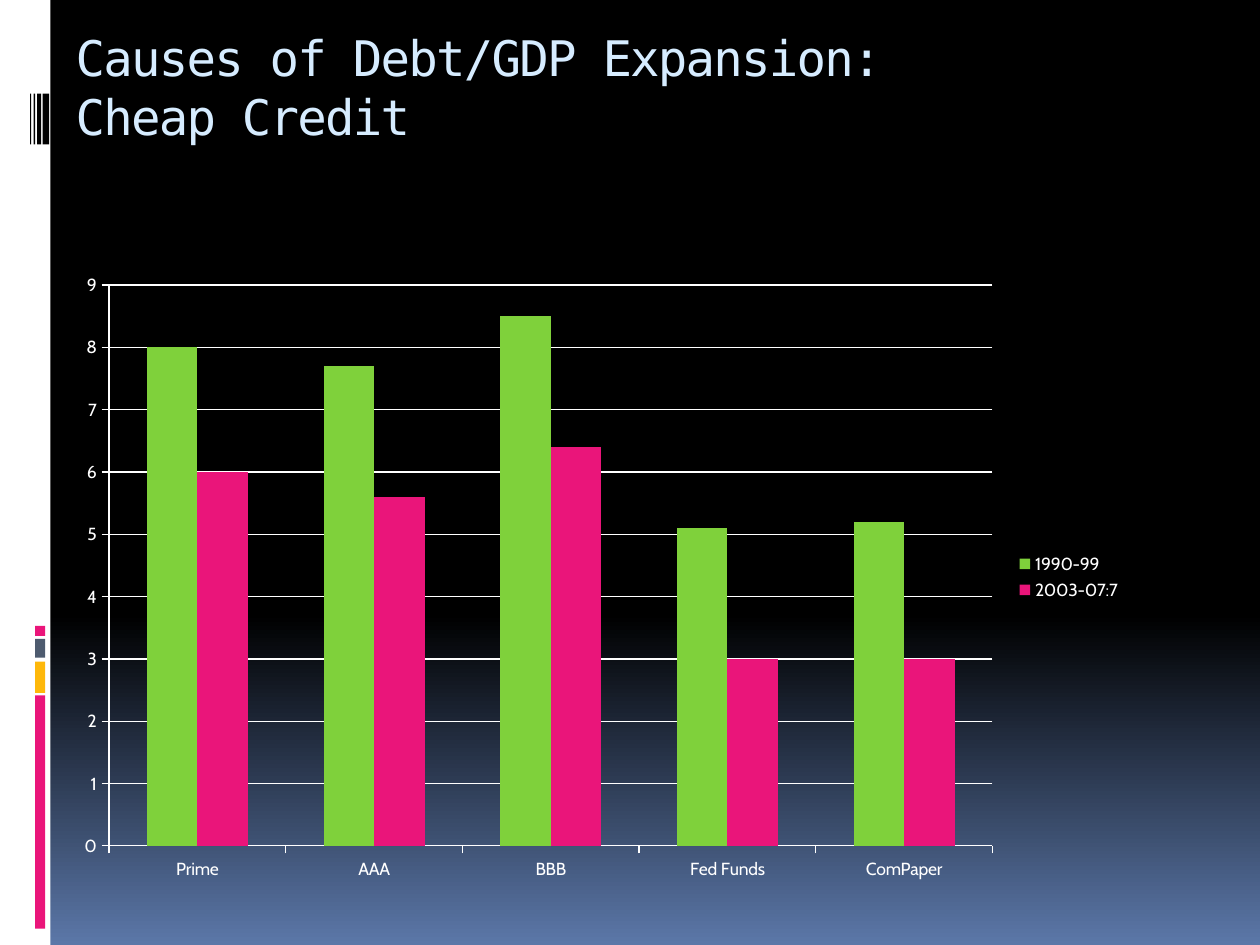
from copy import deepcopy

from pptx import Presentation
from pptx.chart.data import CategoryChartData
from pptx.dml.color import RGBColor
from pptx.enum.chart import XL_CHART_TYPE as ChartType
from pptx.enum.chart import XL_LEGEND_POSITION as LegendPos
from pptx.enum.chart import XL_TICK_MARK as Tick
from pptx.enum.shapes import MSO_SHAPE as Shape
from pptx.enum.text import MSO_ANCHOR as Anchor
from pptx.enum.text import MSO_AUTO_SIZE as AutoSize
from pptx.enum.text import PP_ALIGN as Align
from pptx.util import Cm, Pt

WHITE, BLACK, PINK, GREEN = "FFFFFF", "000000", "EA157A", "7FD13B"
AMBER, SLATE, BLUE, PALE = "FEB80A", "4E5B6F", "5B77A8", "D6ECFF"


def color(value):
    """Turn a hex string into a colour."""
    return RGBColor.from_string(value)


def paint_background(s, stops):
    """Fill the background with a vertical gradient of (position, colour) stops."""
    fill = s.background.fill
    fill.gradient()
    fill.gradient_angle = 270
    gs_list = s.element.xpath(".//a:gsLst")[0]
    while len(gs_list) < len(stops):
        gs_list.append(deepcopy(gs_list[0]))
    for stop, (position, value) in zip(fill.gradient_stops, stops):
        stop.position = position
        stop.color.rgb = color(value)


def add_bar(s, left, top, width, height, fill):
    """Add a plain rectangle, measured in centimetres."""
    sp = s.shapes.add_shape(Shape.RECTANGLE, Cm(left), Cm(top), Cm(width), Cm(height))
    sp.shadow.inherit = False
    sp.fill.solid()
    sp.fill.fore_color.rgb = color(fill)
    sp.line.fill.background()


def add_sidebar(s):
    """Add the white strip with its coloured blocks and barcode."""
    add_bar(s, 0, 0, 1.02, 19.05, WHITE)
    blocks = [(12.62, 0.2, PINK), (12.88, 0.38, SLATE),
              (13.34, 0.63, AMBER), (14.02, 4.7, PINK)]
    for top, height, fill in blocks:
        add_bar(s, 0.71, top, 0.2, height, fill)
    for left, width in [(0.61, 0.02), (0.68, 0.03), (0.75, 0.08), (0.86, 0.13)]:
        add_bar(s, left, 1.89, width, 1.02, BLACK)


def write(tf, text, size=28, font="DejaVu Sans Mono", fill=PALE, spacing=0):
    """Write left-aligned text in the given format."""
    p = tf.paragraphs[0]
    p.text = text
    p.alignment = Align.LEFT
    for r in p.runs:
        r.font.size = Pt(size)
        r.font.name = font
        r.font.color.rgb = color(fill)
        r.font._element.set("spc", str(spacing * 100))


def set_title(s, text):
    """Place and fill the title placeholder."""
    sp = s.shapes.title
    sp.left, sp.top, sp.width, sp.height = Cm(1.27), Cm(0.43), Cm(22.86), Cm(2.34)
    tf = sp.text_frame
    tf.word_wrap = True
    tf.auto_size = AutoSize.NONE
    tf.vertical_anchor = Anchor.TOP
    write(tf, text, spacing=-1)


def style_axis(axis):
    """Give an axis white lines and outside ticks."""
    axis.major_tick_mark = Tick.OUTSIDE
    axis.minor_tick_mark = Tick.NONE
    axis.format.line.color.rgb = color(WHITE)
    axis.format.line.width = Pt(0.75)


def add_rate_chart(s, categories, series):
    """Add the clustered columns of (name, values, colour) series."""
    data = CategoryChartData()
    data.categories = categories
    for name, values, _ in series:
        data.add_series(name, values)
    chart = s.shapes.add_chart(ChartType.COLUMN_CLUSTERED, Cm(1.27), Cm(5.28),
                               Cm(21.59), Cm(12.7), data).chart
    chart.has_title = False
    chart.font.size = Pt(10)
    chart.font.name = "Cabin"
    chart.font.color.rgb = color(WHITE)
    chart.has_legend = True
    chart.legend.position = LegendPos.RIGHT
    chart.legend.include_in_layout = False
    style_axis(chart.category_axis)
    style_axis(chart.value_axis)
    axis = chart.value_axis
    axis.minimum_scale, axis.maximum_scale, axis.major_unit = 0, 9, 1
    axis.has_major_gridlines = True
    axis.major_gridlines.format.line.color.rgb = color(WHITE)
    axis.major_gridlines.format.line.width = Pt(0.75)
    plot = chart.plots[0]
    plot.gap_width, plot.overlap, plot.vary_by_categories = 150, 0, False
    for columns, (_, _, fill) in zip(plot.series, series):
        columns.format.fill.solid()
        columns.format.fill.fore_color.rgb = color(fill)


def main():
    """Build and save the slide."""
    prs = Presentation()
    prs.slide_width, prs.slide_height = Cm(25.4), Cm(19.05)
    s = prs.slides.add_slide(prs.slide_layouts[5])
    paint_background(s, [(0, BLACK), (0.65, BLACK), (1, BLUE)])
    add_sidebar(s)
    set_title(s, "Causes of Debt/GDP Expansion:\vCheap Credit")
    add_rate_chart(s, ["Prime", "AAA", "BBB", "Fed Funds", "ComPaper"], [
        ("1990-99", [8, 7.7, 8.5, 5.1, 5.2], GREEN),
        ("2003-07:7", [6, 5.6, 6.4, 3, 3], PINK),
    ])
    prs.save("out.pptx")


if __name__ == "__main__":
    main()
